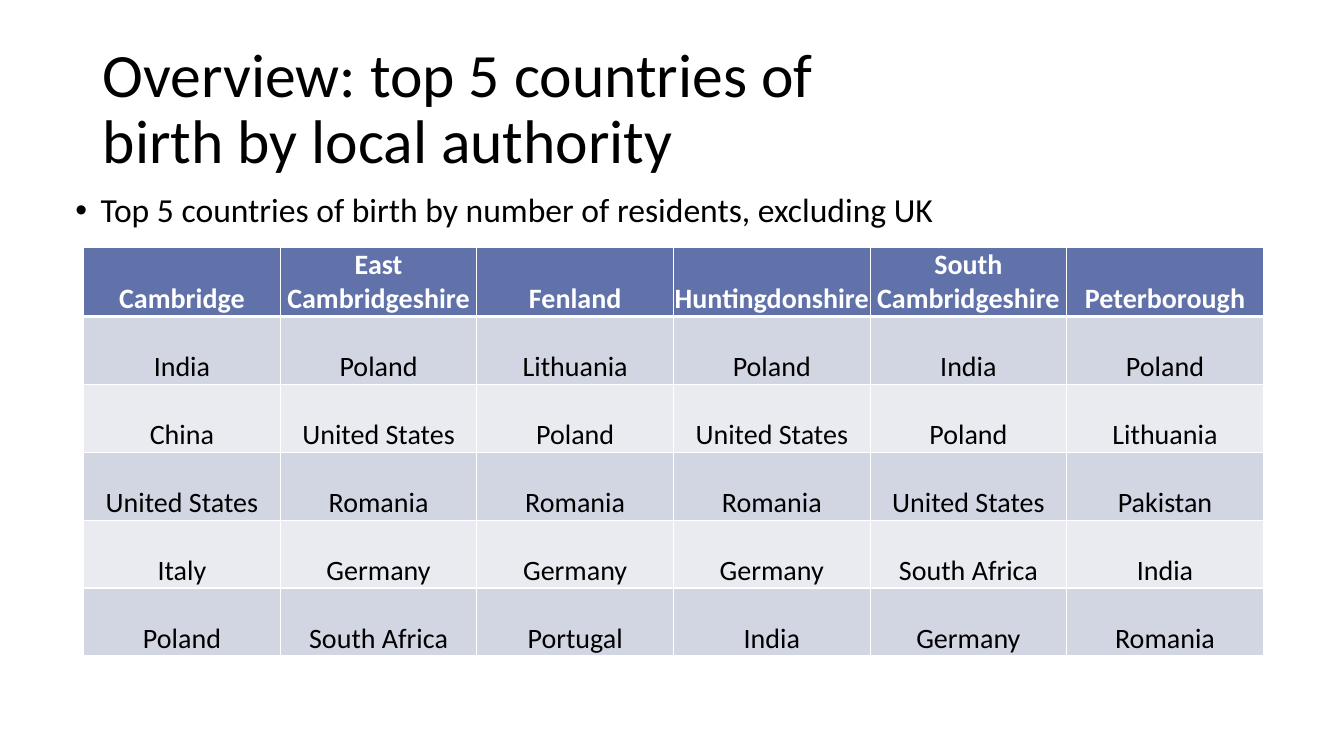
import pptx
import pptx.util
import pptx.dml.color
import pptx.enum.text
import pptx.oxml

Inches = pptx.util.Inches
Pt = pptx.util.Pt
RGBColor = pptx.dml.color.RGBColor
ALIGN = pptx.enum.text.PP_ALIGN
ANCHOR = pptx.enum.text.MSO_ANCHOR

BLACK = RGBColor(0x00, 0x00, 0x00)
WHITE = RGBColor(0xFF, 0xFF, 0xFF)
BLUE = RGBColor(0x60, 0x72, 0xA9)
BANDS = (RGBColor(0xEA, 0xEB, 0xF1), RGBColor(0xD2, 0xD5, 0xE2))
SPACE = "http://schemas.openxmlformats.org/drawingml/2006/main"

TITLE = "Overview: top 5 countries of birth by local authority"
NOTE = "Top 5 countries of birth by number of residents, excluding UK"
ROWS = (
    ("Cambridge", "East Cambridgeshire", "Fenland",
     "Huntingdonshire", "South Cambridgeshire", "Peterborough"),
    ("India", "Poland", "Lithuania", "Poland", "India", "Poland"),
    ("China", "United States", "Poland", "United States", "Poland", "Lithuania"),
    ("United States", "Romania", "Romania", "Romania", "United States", "Pakistan"),
    ("Italy", "Germany", "Germany", "Germany", "South Africa", "India"),
    ("Poland", "South Africa", "Portugal", "India", "Germany", "Romania"),
)
CELL = {
    "vertical_anchor": ANCHOR.BOTTOM,
    "margin_left": 0,
    "margin_right": 0,
    "margin_top": Inches(0.01),
    "margin_bottom": 0,
}


def apply(item, form):
    for name, value in form.items():
        setattr(item, name, value)


def write(para, text, size, color=BLACK, bold=False, **form):
    run = para.add_run()
    run.text = text
    apply(para, form)
    apply(run.font, {"name": "Calibri", "size": Pt(size), "bold": bold})
    run.font.color.rgb = color


def add_title(slide):
    title = slide.shapes.title
    apply(title, {"left": Inches(0.92), "top": Inches(0.34),
                  "width": Inches(7.58), "height": Inches(1.51)})
    frame = title.text_frame
    apply(frame, {"vertical_anchor": ANCHOR.MIDDLE, "word_wrap": True,
                  "auto_size": pptx.enum.text.MSO_AUTO_SIZE.NONE})
    write(frame.paragraphs[0], TITLE, 44,
          alignment=ALIGN.LEFT, line_spacing=0.9)


def add_bullet(slide):
    box = slide.shapes.add_textbox(
        Inches(0.65), Inches(1.87), Inches(11.5), Inches(0.51))
    box.text_frame.word_wrap = True
    para = box.text_frame.paragraphs[0]
    props = para._p.get_or_add_pPr()
    props.set("marL", str(Inches(0.25)))
    props.set("indent", str(Inches(-0.25)))
    for mark in ('<a:buFont xmlns:a="%s" typeface="Arial"/>',
                 '<a:buChar xmlns:a="%s" char="•"/>'):
        props.append(pptx.oxml.parse_xml(mark % SPACE))
    write(para, NOTE, 24, line_spacing=0.9)


def add_edges(cell, row):
    props = cell._tc.get_or_add_tcPr()
    widths = {"L": 1, "R": 1, "T": 3 if row == 1 else 1, "B": 3 if row == 0 else 1}
    for spot, (side, width) in enumerate(widths.items()):
        props.insert(spot, pptx.oxml.parse_xml(
            f'<a:ln{side} xmlns:a="{SPACE}" w="{Pt(width)}"><a:solidFill>'
            f'<a:srgbClr val="{WHITE}"/></a:solidFill></a:ln{side}>'))


def add_grid(slide):
    table = slide.shapes.add_table(
        len(ROWS), len(ROWS[0]), Inches(0.83), Inches(2.45),
        Inches(11.7), Inches(4.04)).table
    for row, names in enumerate(ROWS):
        head = row == 0
        for col, name in enumerate(names):
            cell = table.cell(row, col)
            apply(cell, CELL)
            cell.fill.solid()
            cell.fill.fore_color.rgb = BLUE if head else BANDS[row % 2]
            add_edges(cell, row)
            write(cell.text_frame.paragraphs[0], name, 20,
                  WHITE if head else BLACK, head, alignment=ALIGN.CENTER)


def main():
    deck = pptx.Presentation()
    apply(deck, {"slide_width": Inches(13.33), "slide_height": Inches(7.5)})
    slide = deck.slides.add_slide(deck.slide_layouts[5])
    add_title(slide)
    add_grid(slide)
    add_bullet(slide)
    deck.save("out.pptx")


if __name__ == "__main__":
    main()
